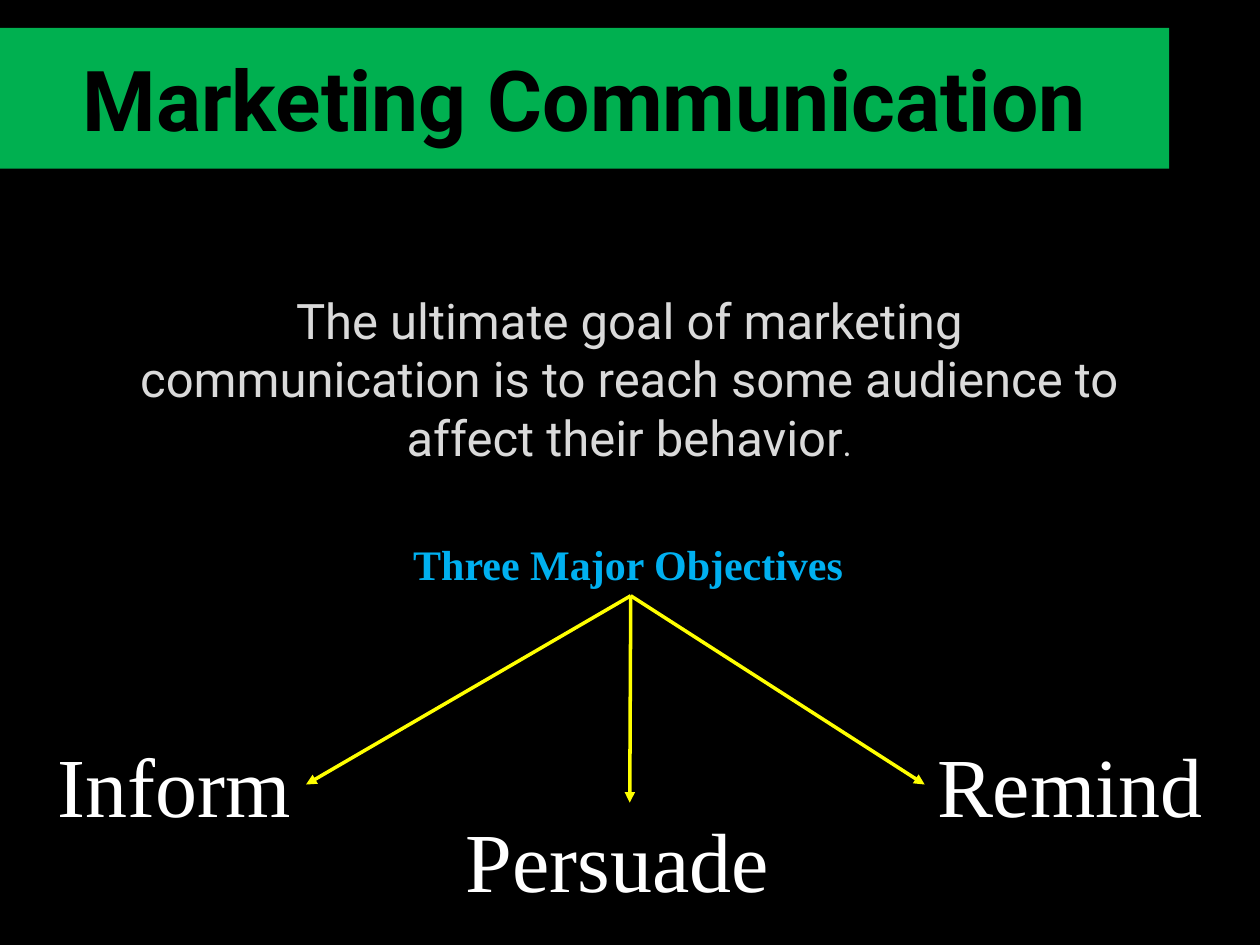
import dataclasses

import pptx
import pptx.dml.color
import pptx.enum.shapes
import pptx.enum.text
import pptx.oxml.ns
import pptx.util
from lxml import etree

Cm = pptx.util.Cm
Pt = pptx.util.Pt
Align = pptx.enum.text.PP_ALIGN
Anchor = pptx.enum.text.MSO_ANCHOR
AutoSize = pptx.enum.text.MSO_AUTO_SIZE
qn = pptx.oxml.ns.qn


@dataclasses.dataclass(frozen=True)
class Theme:
    """Colours, fonts and type sizes of the slide."""

    background: str = "000000"
    banner: str = "00B050"
    title: str = "000000"
    body: str = "DADADA"
    heading: str = "00B0F0"
    label: str = "FFFFFF"
    arrow: str = "FFFF00"
    sans: str = "Roboto"
    serif: str = "Times New Roman"
    large: int = 48
    medium: int = 28
    small: int = 24
    stop: int = 20
    arrow_width: int = 2


THEME = Theme()
TOP, LEFT, BOTTOM, RIGHT = range(4)
OBJECTIVES = [
    ("Remind", (18.64, 14.66, 5.92, 2.31), LEFT),
    ("Inform", (0.91, 14.66, 5.26, 2.31), RIGHT),
    ("Persuade", (9.14, 16.18, 7.11, 2.31), TOP),
]


def apply(target, formats):
    """Set every attribute named in formats on target."""
    for name, value in formats.items():
        setattr(target, name, value)


def paint(fill, color):
    """Make a fill solid in the given colour."""
    fill.solid()
    fill.fore_color.rgb = pptx.dml.color.RGBColor.from_string(color)


def place(box, area):
    """Move and size a box to an area given in centimetres."""
    apply(box, dict(zip(("left", "top", "width", "height"), map(Cm, area))))


def add_span(para, text, color, name, size, bold=False):
    """Append a formatted run to a paragraph."""
    span = para.add_run()
    span.text = text
    apply(span.font, {"name": name, "size": Pt(size), "bold": bold})
    paint(span.font.fill, color)


def fill_title(box):
    """Turn the title placeholder into the green banner."""
    place(box, (0, 0.56, 23.57, 2.84))
    paint(box.fill, THEME.banner)
    apply(box.text_frame, {
        "word_wrap": True,
        "auto_size": AutoSize.NONE,
        "vertical_anchor": Anchor.MIDDLE,
    })
    para = box.text_frame.paragraphs[0]
    para.alignment = Align.CENTER
    add_span(para, "Marketing Communication", THEME.title, THEME.sans, THEME.large, True)


def fill_body(box):
    """Write the goal statement in the body placeholder without a bullet."""
    place(box, (2.26, 5.72, 20.85, 4.78))
    apply(box.text_frame, {"word_wrap": True, "auto_size": AutoSize.NONE})
    para = box.text_frame.paragraphs[0]
    apply(para, {"alignment": Align.CENTER, "space_after": Pt(6)})
    properties = para._p.get_or_add_pPr()
    properties.set("marL", "0")
    properties.set("indent", "0")
    etree.SubElement(properties, qn("a:buNone"))
    goal = (
        "The ultimate goal of marketing communication is to reach "
        "some audience to affect their behavior"
    )
    for text, size in ((goal, THEME.medium), (".", THEME.stop)):
        add_span(para, text, THEME.body, THEME.sans, size)


def add_label(page, text, area, color, size, bold=False):
    """Add a one-line text box that fits its text."""
    box = page.shapes.add_textbox(*map(Cm, area))
    apply(box.text_frame, {"word_wrap": False, "auto_size": AutoSize.SHAPE_TO_FIT_TEXT})
    add_span(box.text_frame.paragraphs[0], text, color, THEME.serif, size, bold)
    return box


def add_arrow(page, source, target, site):
    """Connect the bottom of source to a site of target with an arrow."""
    arrow = page.shapes.add_connector(
        pptx.enum.shapes.MSO_CONNECTOR.STRAIGHT, 0, 0, 0, 0
    )
    arrow.begin_connect(source, BOTTOM)
    arrow.end_connect(target, site)
    arrow.line.width = Pt(THEME.arrow_width)
    paint(arrow.line.fill, THEME.arrow)
    line = arrow.line._get_or_add_ln()
    etree.SubElement(line, qn("a:tailEnd"), type="triangle")
    etree.SubElement(arrow._element.spPr, qn("a:effectLst"))


def main():
    """Build the slide and save it."""
    deck = pptx.Presentation()
    apply(deck, {"slide_width": Cm(25.4), "slide_height": Cm(19.05)})
    page = deck.slides.add_slide(deck.slide_layouts[1])
    paint(page.background.fill, THEME.background)
    fill_title(page.shapes.title)
    fill_body(page.placeholders[1])
    labels = [
        (add_label(page, text, area, THEME.label, THEME.large), site)
        for text, area, site in OBJECTIVES
    ]
    heading = add_label(
        page, "Three Major Objectives", (8.08, 10.74, 9.27, 1.27),
        THEME.heading, THEME.small, True,
    )
    for label, site in labels:
        add_arrow(page, heading, label, site)
    deck.save("out.pptx")


if __name__ == "__main__":
    main()
